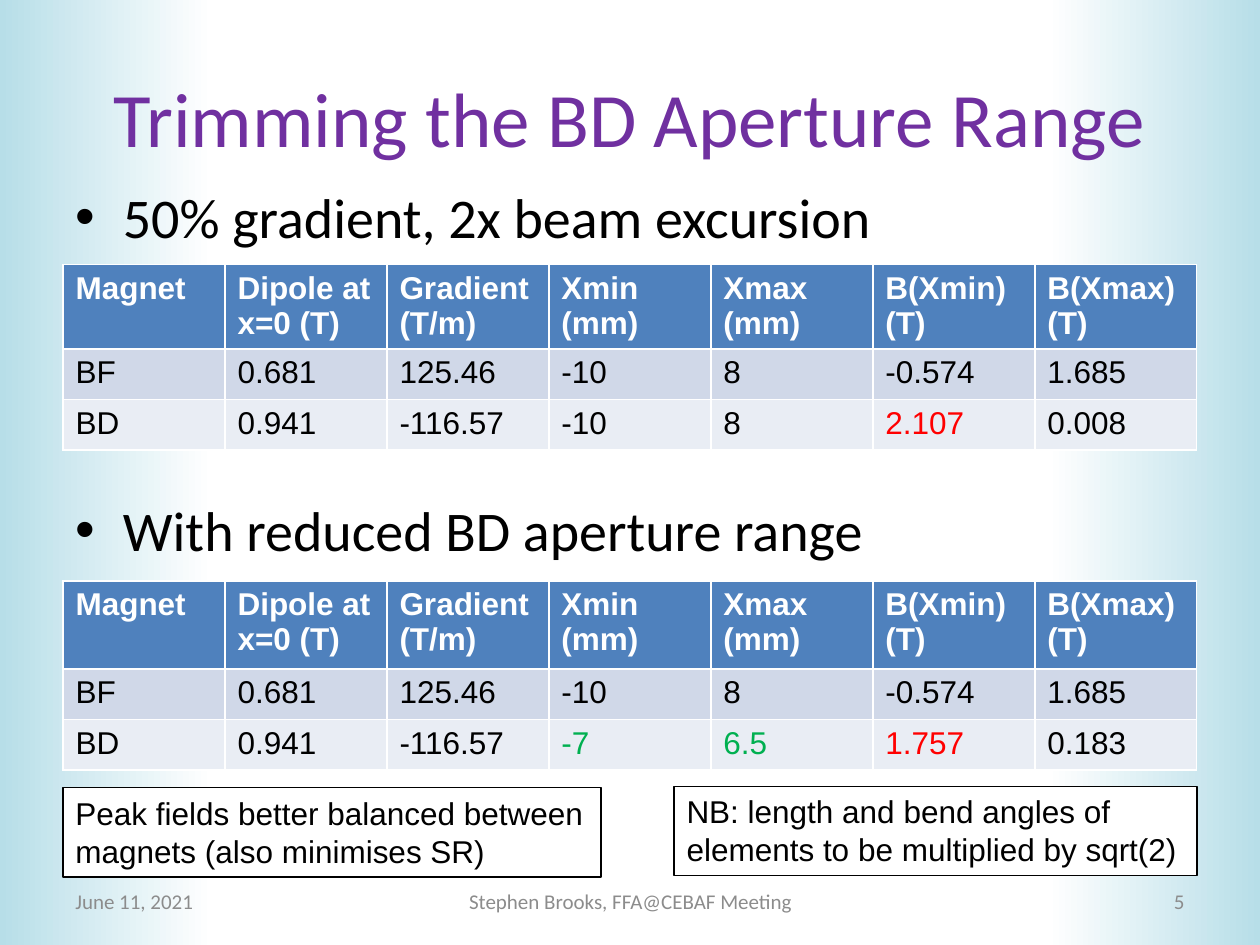
"""Build the slide on trimming the BD aperture range."""
from pptx import Presentation
from pptx.dml.color import RGBColor
from pptx.enum.shapes import MSO_SHAPE
from pptx.enum.text import MSO_ANCHOR, MSO_AUTO_SIZE, PP_ALIGN
from pptx.util import Inches, Pt

WHITE = RGBColor(0xFF, 0xFF, 0xFF)
BLACK = RGBColor(0x00, 0x00, 0x00)
PURPLE = RGBColor(0x70, 0x30, 0xA0)
RED = RGBColor(0xFF, 0x00, 0x00)
GREEN = RGBColor(0x00, 0xB0, 0x50)
GREY = RGBColor(0x8C, 0x8C, 0x8C)
AQUA = RGBColor(0xB7, 0xDE, 0xE8)
HEADER_BLUE = RGBColor(0x4F, 0x81, 0xBD)
BAND_DARK = RGBColor(0xD0, 0xD8, 0xE8)
BAND_LIGHT = RGBColor(0xE9, 0xED, 0xF4)


def style(tf, size, font, color, bold=False):
    for p in tf.paragraphs:
        for r in p.runs:
            r.font.size = Pt(size)
            r.font.name = font
            r.font.color.rgb = color
            r.font.bold = bold


def add_text(s, box, text, size, font, color):
    sp = s.shapes.add_textbox(*[Inches(v) for v in box])
    tf = sp.text_frame
    tf.word_wrap = True
    tf.text = text
    style(tf, size, font, color)
    return sp


prs = Presentation()
prs.slide_width = Inches(10)
prs.slide_height = Inches(7.5)
s = prs.slides.add_slide(prs.slide_layouts[1])

for left, colors in [(0, (AQUA, WHITE)), (8.31, (WHITE, AQUA))]:
    sp = s.shapes.add_shape(MSO_SHAPE.RECTANGLE, Inches(left), 0, Inches(1.69), prs.slide_height)
    sp.shadow.inherit = False
    sp.line.fill.background()
    sp.fill.gradient()
    sp.fill.gradient_angle = 0
    for stop, color in zip(sp.fill.gradient_stops, colors):
        stop.color.rgb = color
    s.shapes._spTree.insert(2, sp._element)

title = s.shapes.title
title.left, title.top, title.width, title.height = [Inches(v) for v in (0.5, 0.3, 9, 1.25)]
title.text_frame.text = "Trimming the BD Aperture Range"
style(title.text_frame, 44, "Calibri", PURPLE)

body = s.placeholders[1]
body.left, body.top, body.width, body.height = [Inches(v) for v in (0.5, 1.4, 9, 4.95)]
tf = body.text_frame
tf.text = "50% gradient, 2x beam excursion\nWith reduced BD aperture range"
tf.auto_size = MSO_AUTO_SIZE.NONE
tf.paragraphs[1].space_before = Pt(140.4)
style(tf, 32, "Calibri", BLACK)

HEADER = ["Magnet", "Dipole at x=0 (T)", "Gradient (T/m)", "Xmin (mm)", "Xmax (mm)",
          "B(Xmin) (T)", "B(Xmax) (T)"]
BF = ["BF", "0.681", "125.46", "-10", "8", "-0.574", "1.685"]
BD_FULL = ["BD", "0.941", "-116.57", "-10", "8", "2.107", "0.008"]
BD_TRIMMED = ["BD", "0.941", "-116.57", "-7", "6.5", "1.757", "0.183"]
FILLS = [HEADER_BLUE, BAND_DARK, BAND_LIGHT]
tables = [
    (2.1, 0.67, BD_FULL, {5: RED}),
    (4.61, 0.7, BD_TRIMMED, {3: GREEN, 4: GREEN, 5: RED}),
]
for top, header_height, bd, highlights in tables:
    frame = s.shapes.add_table(3, 7, Inches(0.5), Inches(top), Inches(9), Inches(header_height + 0.8))
    table = frame.table
    for row, height in zip(table.rows, (header_height, 0.4, 0.4)):
        row.height = Inches(height)
    for i, values in enumerate([HEADER, BF, bd]):
        for j, value in enumerate(values):
            cell = table.cell(i, j)
            cell.fill.solid()
            cell.fill.fore_color.rgb = FILLS[i]
            cell.text_frame.text = value
            color = WHITE if i == 0 else BLACK
            if i == 2:
                color = highlights.get(j, BLACK)
            style(cell.text_frame, 18, "Arial", color, bold=i == 0)

notes = [
    ((5.35, 6.24, 4.15, 0.71), "NB: length and bend angles of elements to be multiplied by sqrt(2)"),
    ((0.5, 6.25, 4.27, 0.71), "Peak fields better balanced between magnets (also minimises SR)"),
]
for box, text in notes:
    sp = add_text(s, box, text, 18, "Arial", BLACK)
    sp.fill.solid()
    sp.fill.fore_color.rgb = WHITE
    sp.line.color.rgb = BLACK
    sp.line.width = Pt(0.75)
    sp.text_frame.auto_size = MSO_AUTO_SIZE.SHAPE_TO_FIT_TEXT

footers = [
    (0.5, 2.33, "June 11, 2021", PP_ALIGN.LEFT),
    (3.42, 3.17, "Stephen Brooks, FFA@CEBAF Meeting", PP_ALIGN.CENTER),
    (7.17, 2.33, "5", PP_ALIGN.RIGHT),
]
for left, width, text, align in footers:
    sp = add_text(s, (left, 6.95, width, 0.4), text, 12, "Calibri", GREY)
    sp.text_frame.vertical_anchor = MSO_ANCHOR.MIDDLE
    sp.text_frame.paragraphs[0].alignment = align

prs.save("out.pptx")
